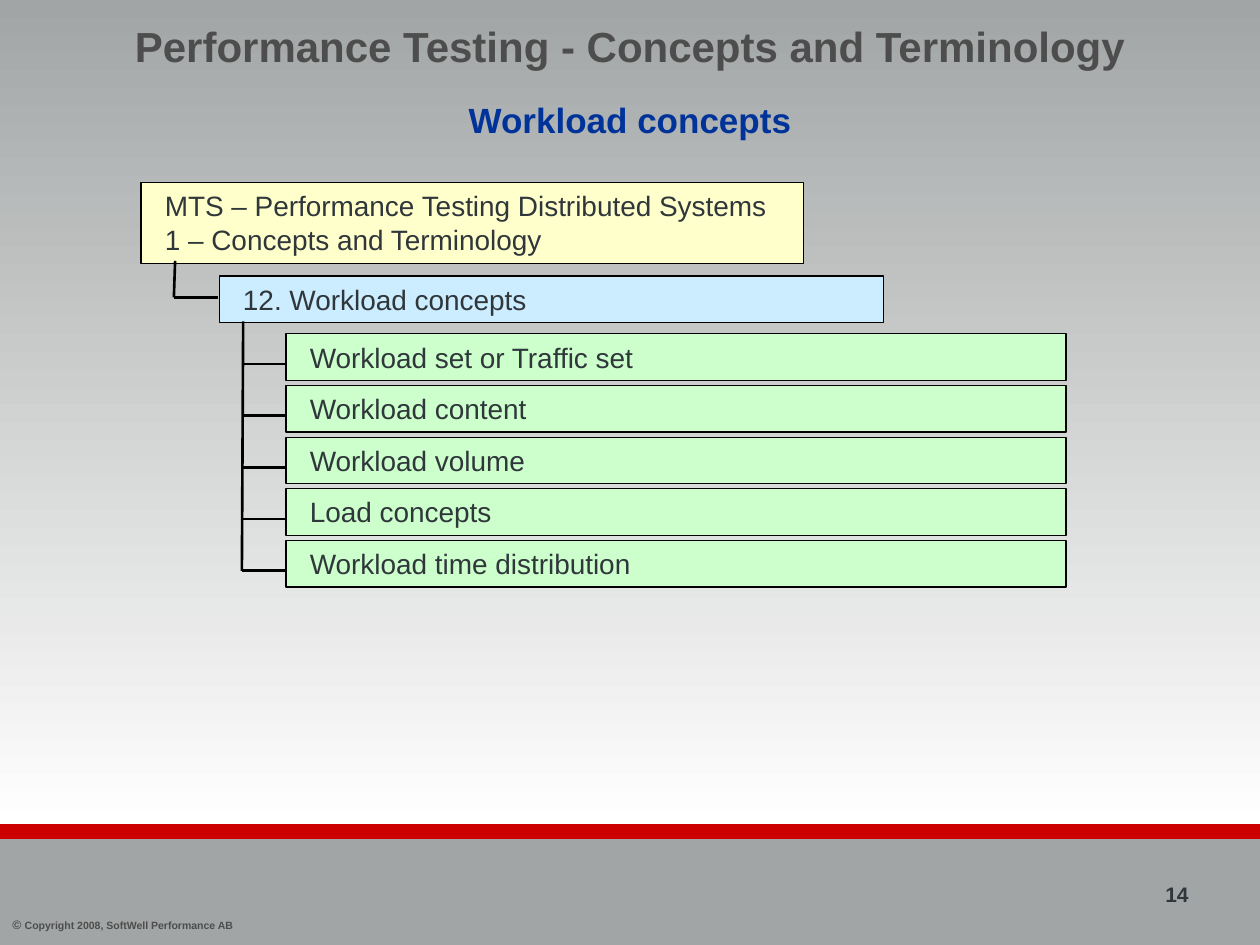
from pptx import Presentation
from pptx.dml.color import RGBColor
from pptx.enum.shapes import MSO_CONNECTOR, MSO_SHAPE
from pptx.enum.text import MSO_ANCHOR, MSO_AUTO_SIZE, PP_ALIGN
from pptx.oxml.ns import qn
from pptx.util import Inches, Pt
from lxml.etree import SubElement

COLORS = {
    "grey": "A2A5A5", "white": "FFFFFF", "red": "CC0000",
    "heading": "4D4D4D", "subheading": "003399", "text": "30373B",
    "black": "000000", "course": "FFFFCC", "chapter": "CCECFF", "topic": "CCFFCC",
}
COLORS = {name: RGBColor.from_string(value) for name, value in COLORS.items()}


def add_box(x, y, w, h, fill):
    """Add a filled rectangle without line or shadow."""
    sp = s.shapes.add_shape(MSO_SHAPE.RECTANGLE, Inches(x), Inches(y), Inches(w), Inches(h))
    sp.shadow.inherit = False
    sp.fill.solid()
    sp.fill.fore_color.rgb = COLORS[fill]
    sp.line.fill.background()
    return sp


def add_run(p, text, size, color, bold=True):
    r = p.add_run()
    r.text = text
    r.font.name = "Arial"
    r.font.size = Pt(size)
    r.font.bold = bold
    r.font.color.rgb = COLORS[color]


prs = Presentation()
prs.slide_width, prs.slide_height = Inches(10), Inches(7.5)
s = prs.slides.add_slide(prs.slide_layouts[0])

# Background bands
sky = add_box(0, 0, 10, 6.56, "white")
sky.fill.gradient()
sky.fill.gradient_angle = 270
for stop, position, color in zip(sky.fill.gradient_stops, (0, 1), ("grey", "white")):
    stop.position = position
    stop.color.rgb = COLORS[color]
add_box(0, 6.54, 10, 0.12, "red")
add_box(0, 6.66, 10, 0.84, "grey")

# Title and subtitle, brought in front of the bands
headings = [
    (s.shapes.title, "Performance Testing - Concepts and Terminology",
     0, 0.73, 24, "heading", MSO_ANCHOR.MIDDLE),
    (s.placeholders[1], "Workload concepts",
     0.73, 0.43, 20, "subheading", MSO_ANCHOR.TOP),
]
for sp, text, y, h, size, color, anchor in headings:
    s.shapes.element.append(sp.element)
    sp.left, sp.top, sp.width, sp.height = 0, Inches(y), Inches(10), Inches(h)
    tf = sp.text_frame
    tf.auto_size = MSO_AUTO_SIZE.NONE
    tf.vertical_anchor = anchor
    p = tf.paragraphs[0]
    p.alignment = PP_ALIGN.CENTER
    p.space_before = Pt(0)
    add_run(p, text, size, color)

# Footer
footers = [
    (0, 7.23, 2.5, 0.22, [("© ", 7, "heading"),
                          ("Copyright 2008, SoftWell Performance AB", 6, "heading")]),
    (9.15, 6.95, 0.85, 0.3, [("14", 12, "text")]),
]
for x, y, w, h, runs in footers:
    tf = s.shapes.add_textbox(Inches(x), Inches(y), Inches(w), Inches(h)).text_frame
    tf.word_wrap = True
    for text, size, color in runs:
        add_run(tf.paragraphs[0], text, size, color)

# Topic tree
TOPIC_X, TOPIC_Y, TOPIC_STEP = 2.27, 2.65, 0.41
topics = ["Workload set or Traffic set", "Workload content", "Workload volume",
          "Load concepts", "Workload time distribution"]
topic_tops = [TOPIC_Y + i * TOPIC_STEP for i in range(len(topics))]
boxes = [
    (1.12, 1.45, 5.26, 0.64, "course",
     ["MTS – Performance Testing Distributed Systems", "1 – Concepts and Terminology"]),
    (1.74, 2.19, 5.27, 0.37, "chapter", ["12. Workload concepts"]),
]
boxes += [(TOPIC_X, y, 6.19, 0.37, "topic", [text])
          for y, text in zip(topic_tops, topics)]
for x, y, w, h, fill, lines in boxes:
    sp = add_box(x, y, w, h, fill)
    sp.line.color.rgb = COLORS["black"]
    sp.line.width = Pt(0.75)
    tf = sp.text_frame
    tf.word_wrap = True
    tf.vertical_anchor = MSO_ANCHOR.TOP
    p = tf.paragraphs[0]
    p.alignment = PP_ALIGN.LEFT
    p._p.get_or_add_pPr().set("marL", str(Inches(0.09)))
    for i, text in enumerate(lines):
        if i:
            p.add_line_break()
        add_run(p, text, 16, "text", bold=False)

# Branches of the tree
branches = [(1.39, 2.07, 1.38, 2.36), (1.38, 2.36, 1.73, 2.36), (1.93, 2.55, 1.92, 4.53)]
branches += [(1.92, y + 0.24, TOPIC_X, y + 0.24) for y in topic_tops]
for branch in branches:
    line = s.shapes.add_connector(MSO_CONNECTOR.STRAIGHT, *map(Inches, branch))
    line.line.color.rgb = COLORS["black"]
    line.line.width = Pt(1.5)
    SubElement(line.element.spPr, qn("a:effectLst"))

prs.save("out.pptx")
